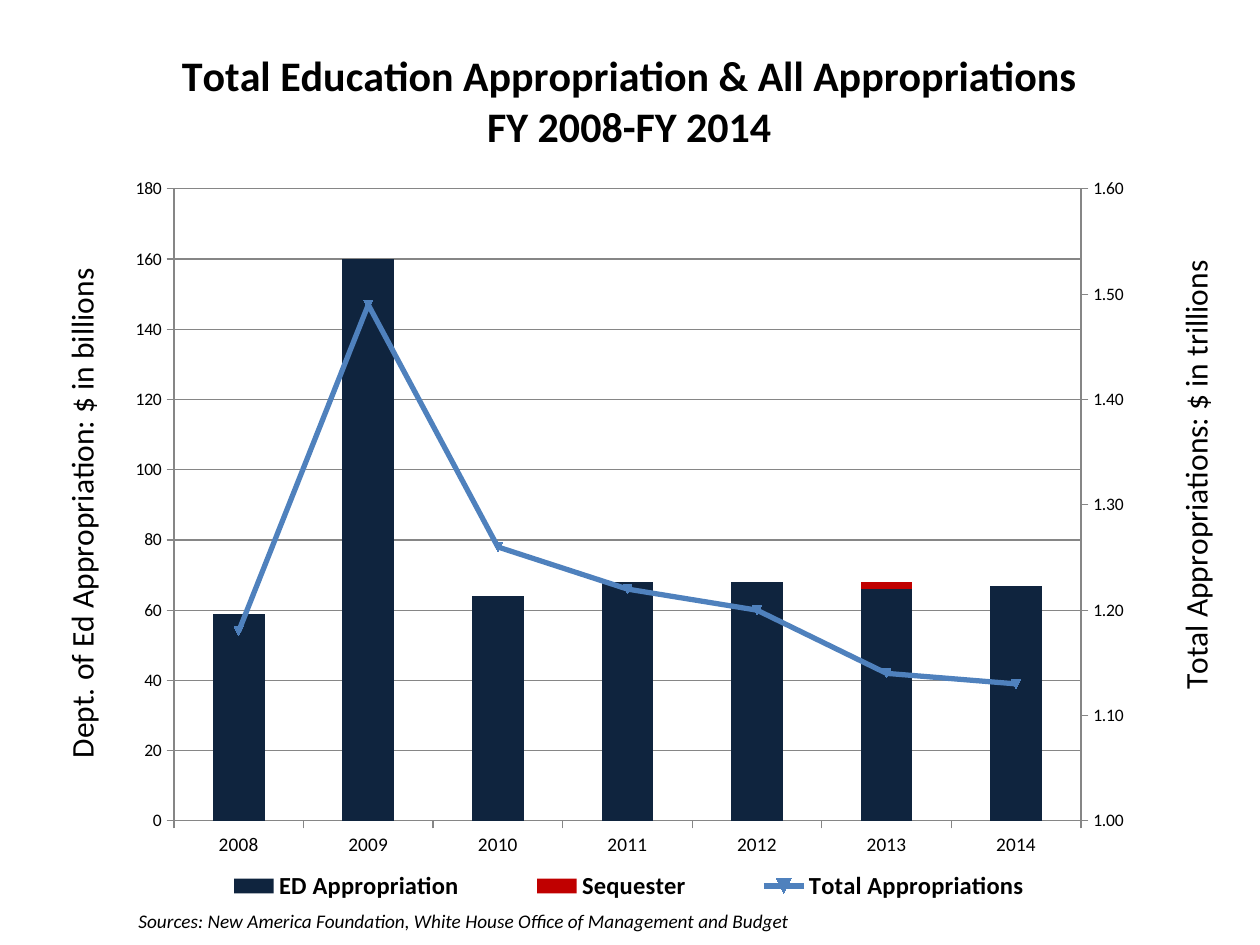
from copy import deepcopy

from pptx import Presentation
from pptx.chart.axis import CategoryAxis, ValueAxis
from pptx.chart.data import CategoryChartData
from pptx.dml.color import RGBColor
from pptx.enum.chart import (
    XL_CHART_TYPE as ChartType,
    XL_LEGEND_POSITION as LegendPosition,
    XL_MARKER_STYLE as MarkerStyle,
    XL_TICK_MARK as TickMark,
)
from pptx.enum.text import MSO_ANCHOR as Anchor
from pptx.oxml import parse_xml
from pptx.oxml.ns import nsdecls, qn
from pptx.util import Emu, Pt

PX = 914400 / 126
FONT = "Calibri"
COLORS = {
    "text": "000000",
    "education": "0F243E",
    "sequester": "C00000",
    "total": "4F81BD",
    "grid": "868686",
}
YEARS = ["2008", "2009", "2010", "2011", "2012", "2013", "2014"]
SERIES = {
    "ED Appropriation": [59, 160, 64, 68, 68, 66, 67],
    "Sequester": [None, None, None, None, None, 2, None],
    "Total Appropriations": [1.18, 1.49, 1.26, 1.22, 1.2, 1.14, 1.13],
}


def px(*lengths):
    return [Emu(round(length * PX)) for length in lengths]


def color(name):
    return RGBColor.from_string(COLORS[name])


def style_font(font, size, bold=False, italic=False):
    font.name, font.size = FONT, Pt(size)
    font.bold, font.italic = bold, italic
    font.color.rgb = color("text")


def place_part(element, index, box, left, top, width=None, height=None):
    """Give a chart part a manual layout, in px relative to the chart box."""
    old = element.find(qn("c:layout"))
    if old is not None:
        element.remove(old)
    sizes = {"x": left / box[2], "y": top / box[3]}
    if width:
        sizes.update(w=width / box[2], h=height / box[3])
    target = '<c:layoutTarget val="inner"/>' if element.tag == qn("c:plotArea") else ""
    modes = "".join(f'<c:{key}Mode val="edge"/>' for key in "xy")
    values = "".join(f'<c:{key} val="{value:.4f}"/>' for key, value in sizes.items())
    element.insert(index, parse_xml(
        f'<c:layout {nsdecls("c")}><c:manualLayout>{target}{modes}{values}'
        "</c:manualLayout></c:layout>"))


def write_title(title, text, size, bold, box, left, top, rotated=False):
    frame = title.text_frame
    frame.text = text
    for paragraph in frame.paragraphs:
        style_font(paragraph.font, size, bold)
    if rotated:
        body = title._element.find(".//" + qn("a:bodyPr"))
        body.set("rot", "-5400000")
        body.set("vert", "horz")
    place_part(title._element, 1, box, left, top)


def style_axis(axis, size):
    axis.major_tick_mark, axis.minor_tick_mark = TickMark.OUTSIDE, TickMark.NONE
    axis.format.line.color.rgb = color("grid")
    style_font(axis.tick_labels.font, size)


def move_to_second_axis(chart, series):
    """Turn a column series into a line on its own axes; return the value axis."""
    plot_area = chart._chartSpace.chart.plotArea
    line_chart = parse_xml(
        f'<c:lineChart {nsdecls("c")}><c:grouping val="standard"/>'
        '<c:varyColors val="0"/><c:marker val="1"/>'
        '<c:axId val="5001"/><c:axId val="5002"/></c:lineChart>')
    element = series._element
    invert = element.find(qn("c:invertIfNegative"))
    if invert is not None:
        element.remove(invert)
    line_chart.insert(2, element)
    plot_area.find(qn("c:barChart")).addnext(line_chart)

    category = deepcopy(chart.category_axis._element)
    value = deepcopy(chart.value_axis._element)
    for axis, own, other in ((category, "5001", "5002"), (value, "5002", "5001")):
        axis.find(qn("c:axId")).set("val", own)
        axis.find(qn("c:crossAx")).set("val", other)
    value.find(qn("c:axPos")).set("val", "r")
    value.find(qn("c:crosses")).set("val", "max")
    chart.value_axis._element.addnext(value)
    value.addnext(category)
    CategoryAxis(category).visible = False
    return ValueAxis(value)


def scale_axis(axis, low, high, step, number_format):
    axis.minimum_scale, axis.maximum_scale, axis.major_unit = low, high, step
    axis.tick_labels.number_format = number_format
    axis.tick_labels.number_format_is_linked = False


def add_appropriations_chart(slide, box):
    data = CategoryChartData()
    data.categories = YEARS
    for name, values in SERIES.items():
        data.add_series(name, values)
    chart = slide.shapes.add_chart(ChartType.COLUMN_STACKED, *px(*box), data).chart
    style_font(chart.font, 10)

    columns = chart.plots[0]
    columns.gap_width, columns.overlap, columns.vary_by_categories = 150, 100, False
    education, sequester, total = columns.series
    for series, name in ((education, "education"), (sequester, "sequester")):
        series.format.fill.solid()
        series.format.fill.fore_color.rgb = color(name)

    left_axis = chart.value_axis
    style_axis(chart.category_axis, 11)
    style_axis(left_axis, 10)
    right_axis = move_to_second_axis(chart, total)
    right_axis.has_major_gridlines = False
    left_axis.has_major_gridlines = True
    left_axis.major_gridlines.format.line.color.rgb = color("grid")
    scale_axis(left_axis, 0, 180, 20, "General")
    scale_axis(right_axis, 1, 1.6, 0.1, "0.00")

    line = chart.plots[1].series[0]
    line.smooth = False
    line.format.line.color.rgb = color("total")
    line.format.line.width = Pt(3)
    line.marker.style, line.marker.size = MarkerStyle.AUTOMATIC, 5
    line.marker.format.fill.solid()
    line.marker.format.fill.fore_color.rgb = color("total")
    line.marker.format.line.color.rgb = color("total")

    write_title(chart.chart_title,
                "Total Education Appropriation & All Appropriations\nFY 2008-FY 2014",
                24, True, box, 146, 25)
    write_title(left_axis.axis_title, "Dept. of Ed Appropriation: $ in billions",
                18, False, box, 22, 242, rotated=True)
    write_title(right_axis.axis_title, "Total Appropriations: $ in trillions",
                18, False, box, 1136, 234, rotated=True)

    chart.has_legend = True
    chart.legend.position = LegendPosition.BOTTOM
    chart.legend.include_in_layout = False
    style_font(chart.legend.font, 14, bold=True)
    place_part(chart.legend._element, 1, box, 132, 846, 930, 38)
    place_part(chart._chartSpace.chart.plotArea, 0, box, 142, 168, 907, 632)


def add_source_note(slide, box):
    frame = slide.shapes.add_textbox(*px(*box)).text_frame
    frame.word_wrap = True
    frame.vertical_anchor = Anchor.MIDDLE
    frame.margin_top = frame.margin_bottom = 0
    paragraph = frame.paragraphs[0]
    paragraph.text = ("Sources: New America Foundation, "
                      "White House Office of Management and Budget")
    style_font(paragraph.font, 11, italic=True)


def main():
    presentation = Presentation()
    presentation.slide_width, presentation.slide_height = px(1260, 945)
    slide = presentation.slides.add_slide(presentation.slide_layouts[6])
    add_appropriations_chart(slide, (32, 21, 1197, 903))
    add_source_note(slide, (126, 906, 723, 29))
    presentation.save("out.pptx")


if __name__ == "__main__":
    main()
